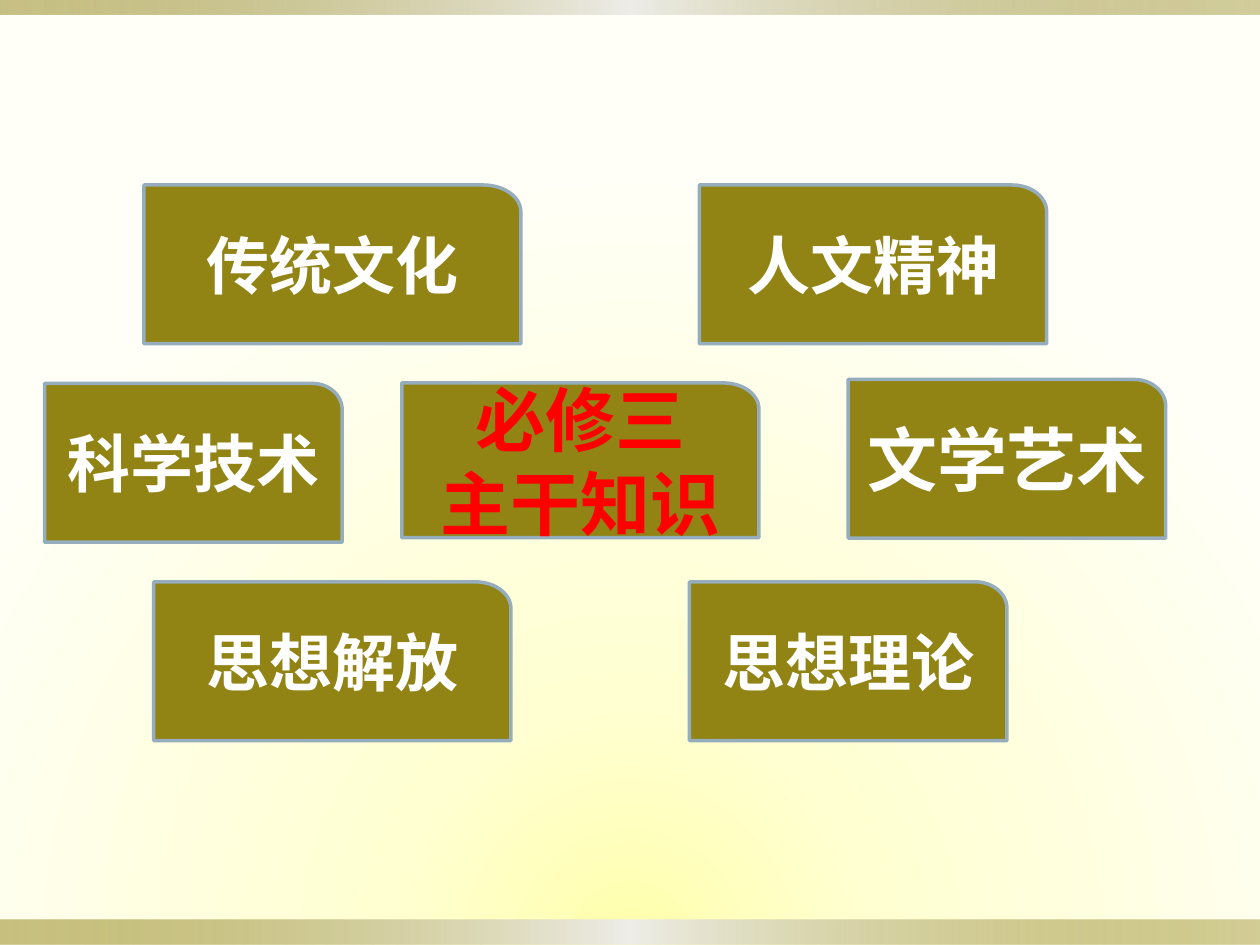
"""Build the Compulsory Three core-knowledge slide."""
import math

import lxml.etree
import pptx
import pptx.dml.color
import pptx.enum.shapes
import pptx.enum.text
import pptx.oxml.ns
import pptx.util

Cm = pptx.util.Cm
Pt = pptx.util.Pt
RGBColor = pptx.dml.color.RGBColor
qn = pptx.oxml.ns.qn

OLIVE = RGBColor(0x91, 0x84, 0x15)
SILVER = RGBColor(0xEE, 0xED, 0xE8)
BLUE_GREY = RGBColor(0x95, 0xAD, 0xBC)
WHITE = RGBColor(0xFF, 0xFF, 0xFF)
RED = RGBColor(0xFF, 0x00, 0x00)
YELLOW = RGBColor(0xFF, 0xFF, 0xAC)
PALE_YELLOW = RGBColor(0xFF, 0xFF, 0xD2)
IVORY = RGBColor(0xFF, 0xFF, 0xF7)


def set_gradient(props, stops, direction):
    grad = lxml.etree.Element(qn("a:gradFill"), rotWithShape="1")
    gs_list = lxml.etree.SubElement(grad, qn("a:gsLst"))
    for position, color, opacity in stops:
        gs = lxml.etree.SubElement(gs_list, qn("a:gs"), pos=str(position * 1000))
        clr = lxml.etree.SubElement(gs, qn("a:srgbClr"), val=str(color))
        if opacity < 100:
            lxml.etree.SubElement(clr, qn("a:alpha"), val=str(opacity * 1000))
    grad.append(direction)
    props.replace(props.find(qn("a:solidFill")), grad)


def write_text(shape, text, size=36, color=WHITE, font="Karla"):
    tf = shape.text_frame
    tf.word_wrap = True
    tf.vertical_anchor = pptx.enum.text.MSO_ANCHOR.MIDDLE
    for i, line in enumerate(text.split("\n")):
        p = tf.add_paragraph() if i else tf.paragraphs[0]
        p.alignment = pptx.enum.text.PP_ALIGN.CENTER
        r = p.add_run()
        r.text = line
        r.font.name = font
        r.font.size = Pt(size)
        r.font.bold = True
        r.font.color.rgb = color


prs = pptx.Presentation()
prs.slide_width = Cm(25.4)
prs.slide_height = Cm(19.05)
s = prs.slides.add_slide(prs.slide_layouts[6])

s.background.fill.solid()
circle = lxml.etree.Element(qn("a:path"), path="circle")
lxml.etree.SubElement(circle, qn("a:fillToRect"), l="50000", t="150000", r="50000", b="0")
set_gradient(s._element.cSld.bg.bgPr,
             [(0, YELLOW, 100), (31, PALE_YELLOW, 100), (100, IVORY, 100)], circle)

for top, height in [(18.55, 0.5), (0, 0.3)]:
    band = s.shapes.add_shape(pptx.enum.shapes.MSO_SHAPE.RECTANGLE,
                              Cm(0), Cm(top), prs.slide_width, Cm(height))
    band.shadow.inherit = False
    band.line.fill.background()
    band.fill.solid()
    set_gradient(band._element.spPr, [(0, OLIVE, 50), (50, SILVER, 100), (100, OLIVE, 40)],
                 lxml.etree.Element(qn("a:lin"), ang="0", scaled="0"))

topics = [
    ("必修三\n主干知识", 8.1, 7.72, 7.2, 3.12, 40, RED),
    ("传统文化", 2.9, 3.73, 7.6, 3.2, 36, WHITE),
    ("人文精神", 14.1, 3.73, 7, 3.2, 36, WHITE),
    ("思想理论", 13.9, 11.73, 6.4, 3.2, 36, WHITE),
    ("文学艺术", 17.1, 7.65, 6.4, 3.2, 40, WHITE),
    ("思想解放", 3.1, 11.73, 7.2, 3.2, 36, WHITE),
    ("科学技术", 0.9, 7.73, 6, 3.2, 36, WHITE),
]
for text, left, top, width, height, size, color in topics:
    right, bottom = left + width, top + height
    rx, ry = width / 10, height / 6
    corner = []
    for step in range(13):
        angle = math.pi / 2 * step / 12
        corner.append((Cm(right - rx + rx * math.sin(angle)),
                       Cm(top + ry - ry * math.cos(angle))))
    outline = s.shapes.build_freeform(Cm(left), Cm(top))
    outline.add_line_segments(corner + [(Cm(right), Cm(bottom)), (Cm(left), Cm(bottom))])
    card = outline.convert_to_shape()
    card.shadow.inherit = False
    card.fill.solid()
    card.fill.fore_color.rgb = OLIVE
    card.line.color.rgb = BLUE_GREY
    card.line.width = Pt(2)
    write_text(card, text, size=size, color=color)

prs.save("out.pptx")
